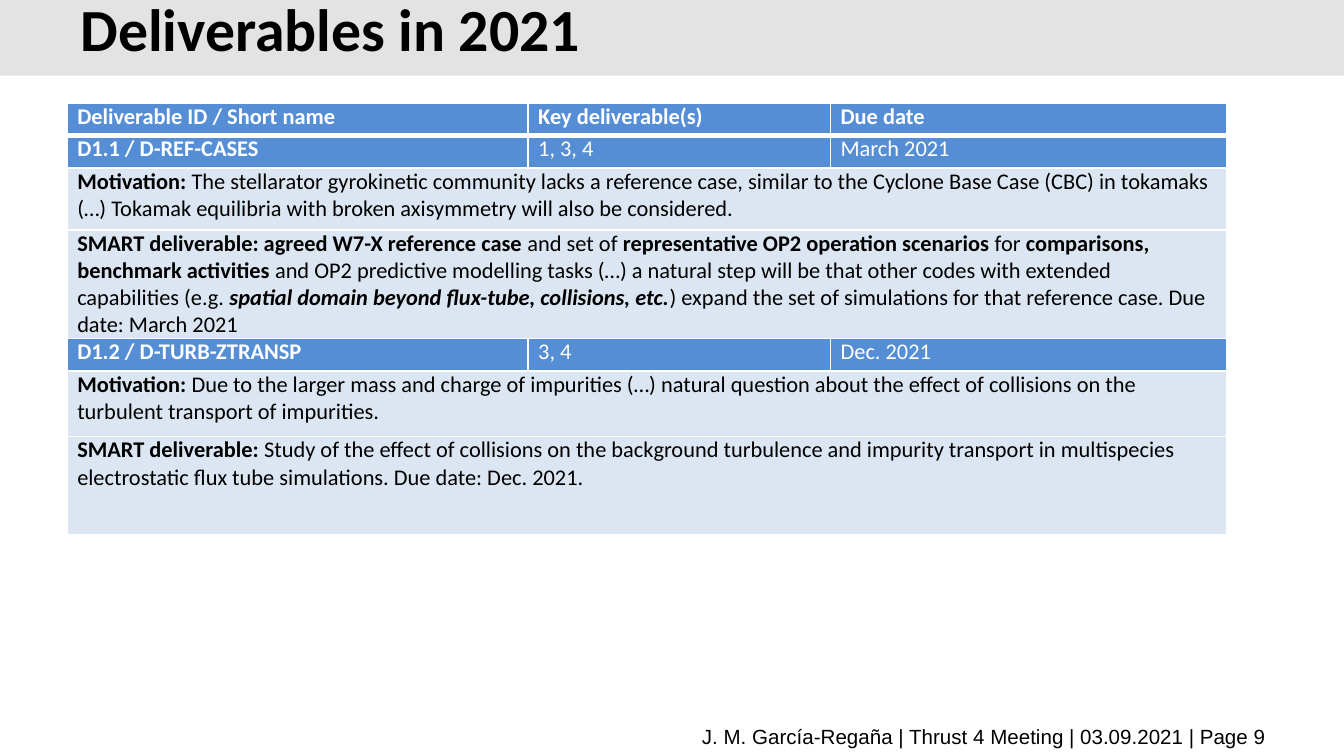
from pptx import Presentation
from pptx.dml.color import RGBColor
from pptx.enum.shapes import MSO_SHAPE
from pptx.enum.text import MSO_ANCHOR, PP_ALIGN
from pptx.oxml import parse_xml
from pptx.oxml.ns import nsdecls
from pptx.util import Inches, Pt

# Content: each cell is a list of (text, style) runs; b = bold, i = italic
TITLE = "Deliverables in 2021"
FOOTER = "J. M. García-Regaña | Thrust 4 Meeting | 03.09.2021 | Page 9"
ROWS = [
    [[("Deliverable ID / Short name", "b")], [("Key deliverable(s)", "b")], [("Due date", "b")]],
    [[("D1.1 / D-REF-CASES", "b")], [("1, 3, 4", "")], [("March 2021", "")]],
    [[("Motivation: ", "b"),
      ("The stellarator gyrokinetic community lacks a reference case, similar to the "
       "Cyclone Base Case (CBC) in tokamaks (…) Tokamak equilibria with broken "
       "axisymmetry will also be considered.", "")]],
    [[("SMART deliverable: agreed W7-X reference case", "b"),
      (" and set of ", ""),
      ("representative OP2 operation scenarios ", "b"),
      ("for ", ""),
      ("comparisons, benchmark activities", "b"),
      (" and OP2 predictive modelling tasks (…) a natural step will be that other codes "
       "with extended capabilities (e.g. ", ""),
      ("spatial domain beyond flux-tube, collisions, etc.", "bi"),
      (") expand the set of simulations for that reference case. Due date: March 2021", "")]],
    [[("D1.2 / D-TURB-ZTRANSP", "b")], [("3, 4", "")], [("Dec. 2021", "")]],
    [[("Motivation: ", "b"),
      ("Due to the larger mass and charge of impurities (…) natural question about the "
       "effect of collisions on the turbulent transport of impurities.", "")]],
    [[("SMART deliverable: ", "b"),
      ("Study of the effect of collisions on the background turbulence and impurity "
       "transport in multispecies electrostatic flux tube simulations. "
       "Due date: Dec. 2021.", "")]],
]
SLIDE_WIDTH = 10
SLIDE_HEIGHT = SLIDE_WIDTH * 9 / 16
COL_WIDTHS = [3.43, 2.25, 2.95]
ROW_HEIGHTS = [0.24, 0.24, 0.46, 0.81, 0.24, 0.49, 0.73]
CELL_MARGIN = Pt(5.4)
BLACK, WHITE, GREY, BLUE, PALE = "000000", "FFFFFF", "E3E3E3", "558ED5", "DCE6F2"


def color(value):
    return RGBColor.from_string(value)


def set_font(font, name, size, value, bold=None):
    font.name, font.size, font.bold = name, Pt(size), bold
    font.color.rgb = color(value)


def add_text(slide, text, left, top, width, height):
    tf = slide.shapes.add_textbox(*map(Inches, (left, top, width, height))).text_frame
    tf.word_wrap = True
    tf.vertical_anchor = MSO_ANCHOR.MIDDLE
    tf.margin_top = tf.margin_bottom = 0
    p = tf.paragraphs[0]
    p.text = text
    return p


def set_borders(cell, **widths):
    for i, side in enumerate("LRTB"):
        width = Pt(widths.get(side, 1))
        cell._tc.get_or_add_tcPr().insert(i, parse_xml(
            f'<a:ln{side} {nsdecls("a")} w="{width}"><a:solidFill>'
            f'<a:srgbClr val="{WHITE}"/></a:solidFill></a:ln{side}>'))


def fill_cell(cell, runs, text_color):
    cell.margin_left = cell.margin_right = CELL_MARGIN
    cell.margin_top = cell.margin_bottom = 0
    p = cell.text_frame.paragraphs[0]
    for text, style in runs:
        r = p.add_run()
        r.text = text
        set_font(r.font, "Calibri", 12, text_color, "b" in style)
        r.font.italic = "i" in style


prs = Presentation()
prs.slide_width, prs.slide_height = Inches(SLIDE_WIDTH), Inches(SLIDE_HEIGHT)
s = prs.slides.add_slide(prs.slide_layouts[6])

# Title band: a tenth of the slide height
band = s.shapes.add_shape(
    MSO_SHAPE.RECTANGLE, 0, 0, prs.slide_width, Inches(SLIDE_HEIGHT / 10))
band.shadow.inherit = False
band.fill.solid()
band.fill.fore_color.rgb = color(GREY)
band.line.fill.background()
p = add_text(s, TITLE, 0.5, 0.06, 8.25, 0.38)
p.line_spacing = Pt(32)
set_font(p.font, "Calibri", 32, BLACK, True)

# Footer
p = add_text(s, FOOTER, 0.51, 5.37, 9.01, 0.22)
p.alignment = PP_ALIGN.RIGHT
set_font(p.font, "Arial", 11, BLACK)

# Deliverables table: one-cell rows span all columns
table = s.shapes.add_table(
    len(ROWS), len(COL_WIDTHS), Inches(0.5), Inches(0.77),
    Inches(sum(COL_WIDTHS)), Inches(sum(ROW_HEIGHTS))).table
for column, width in zip(table.columns, COL_WIDTHS):
    column.width = Inches(width)
for i, (cells, height) in enumerate(zip(ROWS, ROW_HEIGHTS)):
    table.rows[i].height = Inches(height)
    spans = len(cells) == 1
    for j in range(len(COL_WIDTHS)):
        cell = table.cell(i, j)
        cell.fill.solid()
        cell.fill.fore_color.rgb = color(PALE if spans else BLUE)
        set_borders(cell, T=3 if i == 1 else 1, B=3 if i == 0 else 1)
    if spans:
        table.cell(i, 0).merge(table.cell(i, len(COL_WIDTHS) - 1))
    for j, runs in enumerate(cells):
        fill_cell(table.cell(i, j), runs, BLACK if spans else WHITE)

prs.save("out.pptx")
